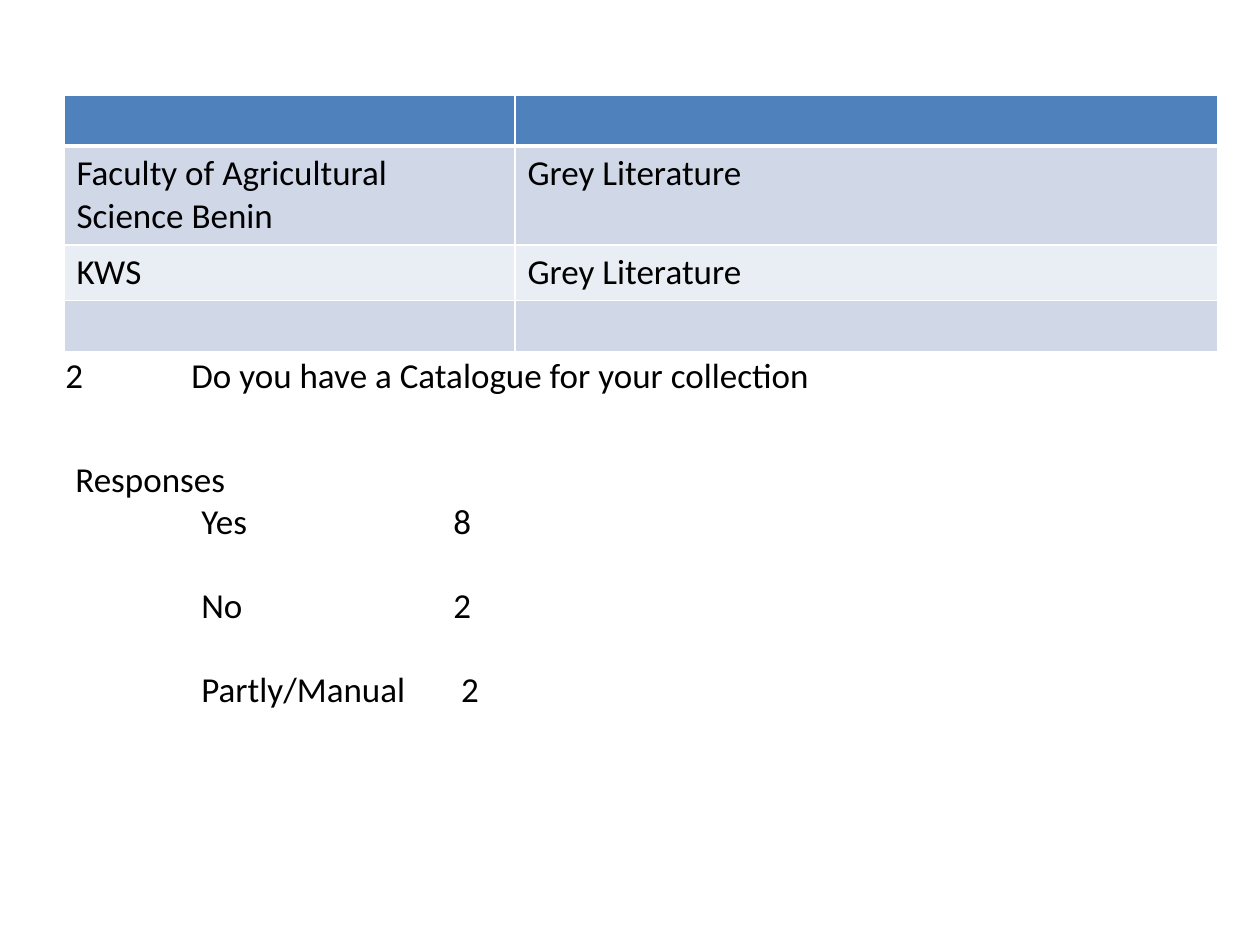
from dataclasses import dataclass

from lxml import etree
from pptx import Presentation
from pptx import util as u
from pptx.dml.color import RGBColor
from pptx.oxml.ns import qn

ROWS = [
    ("", ""),
    ("Faculty of Agricultural Science Benin", "Grey Literature"),
    ("KWS", "Grey Literature"),
    ("", ""),
]
QUESTION = ["2\tDo you have a Catalogue for your collection"]
RESPONSES = ["Responses", "\tYes\t8", "\tNo\t2", "\tPartly/Manual\t 2"]

COLUMN_WIDTHS = (451, 703)
ROW_HEIGHTS = (50, 99, 55, 51)
TABLE_AT = (64, 95)
QUESTION_AT = (53, 347, 1155, 55)
RESPONSES_AT = (63, 451, 1144, 267)
TAB_STOPS = (126, 378)
SCALE = u.Inches(1) / 126


@dataclass(frozen=True)
class Theme:
    font: str = "Calibri"
    size: int = 20
    gap: int = 24
    ink: str = "000000"
    header: str = "4F81BD"
    bands: tuple = ("D0D8E8", "E9EDF4")
    border: str = "FFFFFF"
    thin: int = 1
    thick: int = 3


THEME = Theme()


def px(length):
    return u.Emu(round(length * SCALE))


def write(para, text, size=THEME.size, color=THEME.ink, before=0, tabs=()):
    para.space_before = u.Pt(before)
    if tabs:
        stops = etree.SubElement(para._p.get_or_add_pPr(), qn("a:tabLst"))
        for stop in tabs:
            etree.SubElement(stops, qn("a:tab"), pos=str(px(stop)), algn="l")
    span = para.add_run()
    span.text = text
    span.font.name = THEME.font
    span.font.size = u.Pt(size)
    span.font.color.rgb = RGBColor.from_string(color)


def set_borders(cell, **widths):
    properties = cell._tc.get_or_add_tcPr()
    for side in "LRTB":
        width = u.Pt(widths.get(side, THEME.thin))
        line = etree.SubElement(properties, qn(f"a:ln{side}"), w=str(width))
        fill = etree.SubElement(line, qn("a:solidFill"))
        etree.SubElement(fill, qn("a:srgbClr"), val=THEME.border)


def add_literature_table(page):
    frame = page.shapes.add_table(
        len(ROWS), len(COLUMN_WIDTHS), *map(px, TABLE_AT),
        px(sum(COLUMN_WIDTHS)), px(sum(ROW_HEIGHTS)))
    table = frame.table
    for column, width in zip(table.columns, COLUMN_WIDTHS):
        column.width = px(width)
    for index, (row, height, texts) in enumerate(zip(table.rows, ROW_HEIGHTS, ROWS)):
        row.height = px(height)
        color = THEME.bands[(index - 1) % 2] if index else THEME.header
        edge = {0: {"B": THEME.thick}, 1: {"T": THEME.thick}}.get(index, {})
        for cell, text in zip(row.cells, texts):
            set_borders(cell, **edge)
            cell.fill.solid()
            cell.fill.fore_color.rgb = RGBColor.from_string(color)
            if text:
                write(cell.text_frame.paragraphs[0], text)


def add_lines(page, lines, place):
    box = page.shapes.add_textbox(*map(px, place))
    frame = box.text_frame
    frame.word_wrap = True
    for index, line in enumerate(lines):
        para = frame.add_paragraph() if index else frame.paragraphs[0]
        write(para, line, before=THEME.gap if index > 1 else 0, tabs=TAB_STOPS)


def main():
    deck = Presentation()
    deck.slide_width, deck.slide_height = px(1260), px(945)
    page = deck.slides.add_slide(deck.slide_layouts[6])
    add_literature_table(page)
    add_lines(page, QUESTION, QUESTION_AT)
    add_lines(page, RESPONSES, RESPONSES_AT)
    deck.save("out.pptx")


if __name__ == "__main__":
    main()
